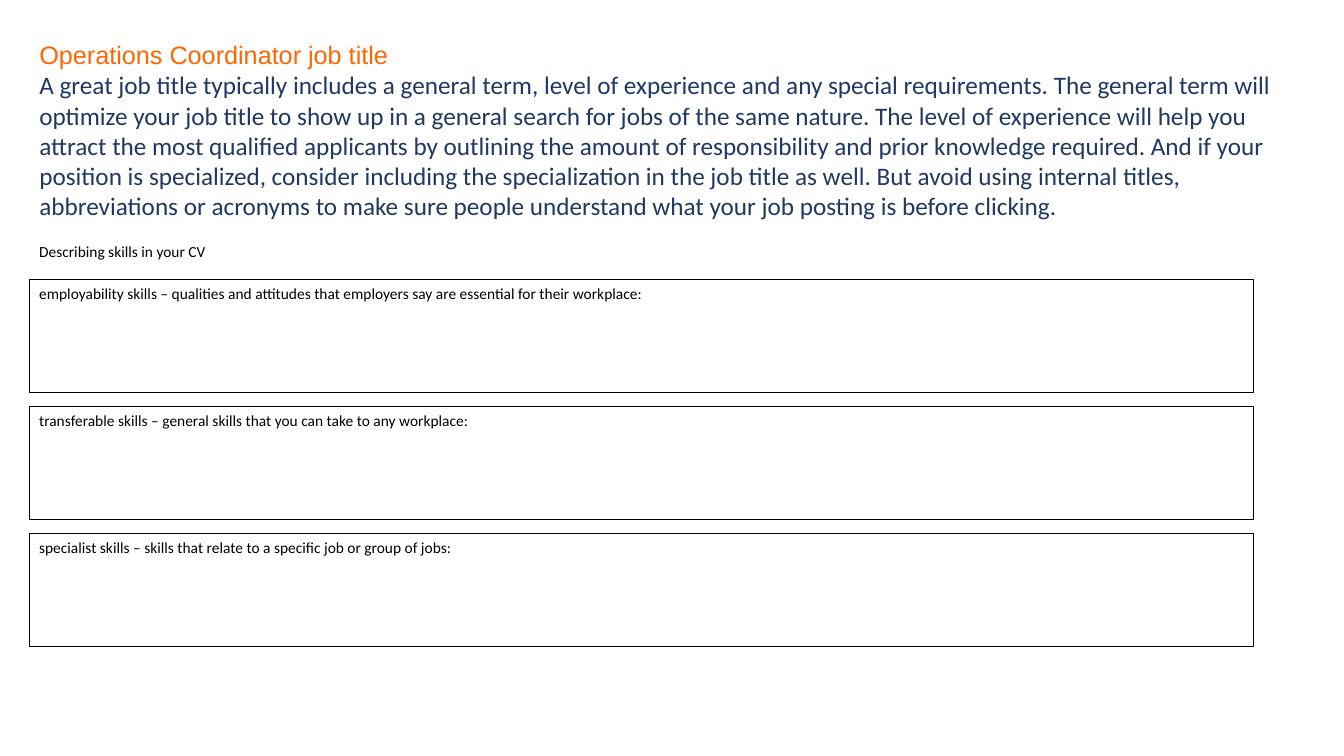
import pptx
import pptx.dml.color
import pptx.enum.shapes
import pptx.enum.text
import pptx.util

Inches = pptx.util.Inches
Pt = pptx.util.Pt
RGBColor = pptx.dml.color.RGBColor
AUTO_SIZE = pptx.enum.text.MSO_AUTO_SIZE

ORANGE = RGBColor(0xFF, 0x66, 0x00)
NAVY = RGBColor(0x20, 0x38, 0x64)
BLACK = RGBColor(0x00, 0x00, 0x00)
WHITE = RGBColor(0xFF, 0xFF, 0xFF)

LEFT = 0.29
BOX_TOP = 2.77
BOX_WIDTH = 12.14
BOX_HEIGHT = 1.12
BOX_PITCH = 1.26

HEADING = "Operations Coordinator job title"
ADVICE = (
    "A great job title typically includes a general term, level of experience "
    "and any special requirements. The general term will optimize your job title "
    "to show up in a general search for jobs of the same nature. The level of "
    "experience will help you attract the most qualified applicants by outlining "
    "the amount of responsibility and prior knowledge required. And if your "
    "position is specialized, consider including the specialization in the job "
    "title as well. But avoid using internal titles, abbreviations or acronyms to "
    "make sure people understand what your job posting is before clicking."
)
SKILLS = [
    "employability skills – qualities and attitudes that employers say are "
    "essential for their workplace:",
    "transferable skills – general skills that you can take to any workplace:",
    "specialist skills – skills that relate to a specific job or group of jobs:",
]


def add_run(p, text, size, color, font="Calibri"):
    p.alignment = pptx.enum.text.PP_ALIGN.LEFT
    r = p.add_run()
    r.text = text
    r.font.size = Pt(size)
    r.font.name = font
    r.font.color.rgb = color


def set_frame(tf, wrap, auto_size):
    tf.word_wrap = wrap
    tf.auto_size = auto_size
    tf.vertical_anchor = pptx.enum.text.MSO_ANCHOR.TOP


def fill_title(s):
    sp = s.shapes.title
    sp.left, sp.top = Inches(LEFT), Inches(0.34)
    sp.width, sp.height = Inches(12.49), Inches(1.92)
    tf = sp.text_frame
    set_frame(tf, True, AUTO_SIZE.SHAPE_TO_FIT_TEXT)
    add_run(tf.paragraphs[0], HEADING, 18, ORANGE, "Arial")
    add_run(tf.add_paragraph(), ADVICE, 18, NAVY)


def add_label(s, text):
    sp = s.shapes.add_textbox(Inches(LEFT), Inches(2.34), Inches(1.86), Inches(0.29))
    set_frame(sp.text_frame, False, AUTO_SIZE.SHAPE_TO_FIT_TEXT)
    p = sp.text_frame.paragraphs[0]
    p.line_spacing = 1.07
    p.space_after = Pt(8)
    add_run(p, text, 11, BLACK)


def add_skill_box(s, top, text):
    sp = s.shapes.add_shape(
        pptx.enum.shapes.MSO_SHAPE.RECTANGLE,
        Inches(LEFT), Inches(top), Inches(BOX_WIDTH), Inches(BOX_HEIGHT),
    )
    sp.shadow.inherit = False
    sp.fill.solid()
    sp.fill.fore_color.rgb = WHITE
    sp.line.color.rgb = BLACK
    sp.line.width = Pt(0.75)
    set_frame(sp.text_frame, True, AUTO_SIZE.NONE)
    add_run(sp.text_frame.paragraphs[0], text, 11, BLACK)


def main():
    prs = pptx.Presentation()
    prs.slide_width = Inches(13.33)
    prs.slide_height = Inches(7.5)
    s = prs.slides.add_slide(prs.slide_layouts.get_by_name("Title Only"))
    fill_title(s)
    add_label(s, "Describing skills in your CV")
    for i, text in enumerate(SKILLS):
        add_skill_box(s, BOX_TOP + i * BOX_PITCH, text)
    prs.save("out.pptx")


if __name__ == "__main__":
    main()
